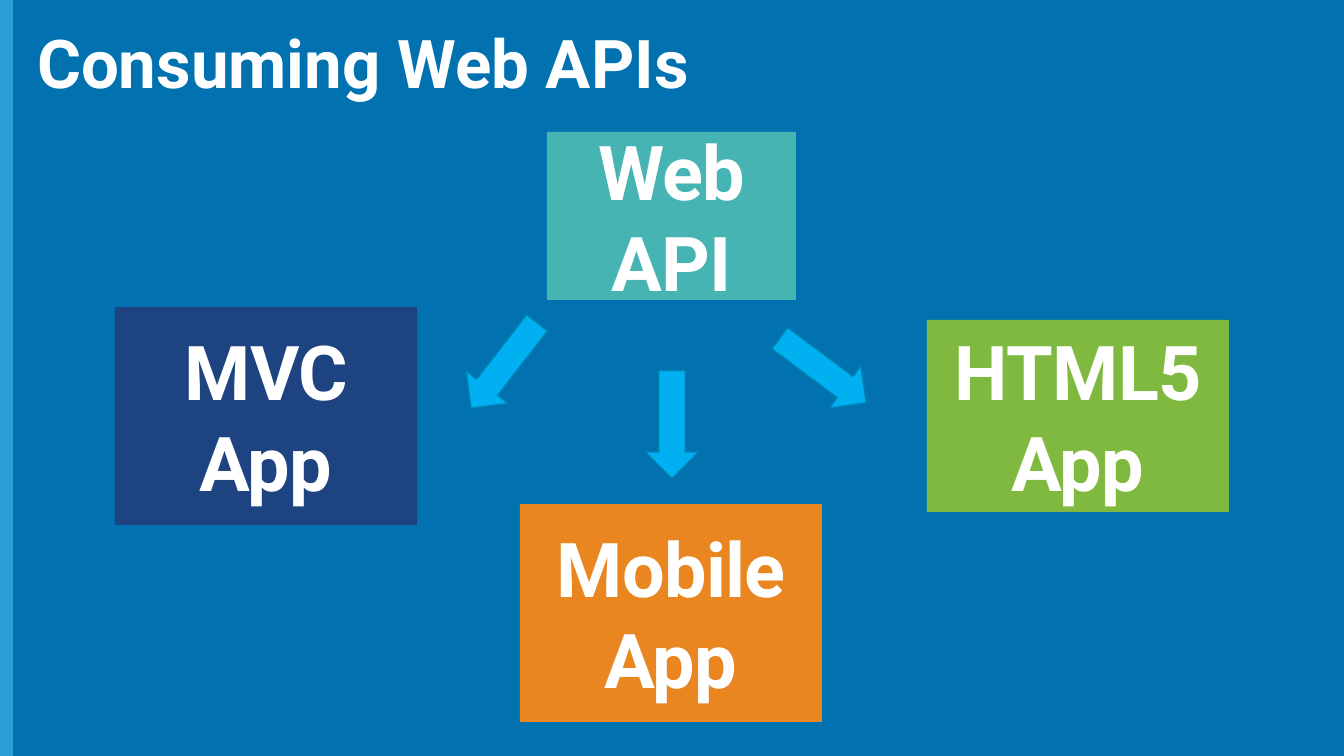
from pptx import Presentation
from pptx.dml.color import RGBColor
from pptx.enum.shapes import MSO_SHAPE as SHAPE
from pptx.enum.text import MSO_ANCHOR as ANCHOR, MSO_AUTO_SIZE as AUTO_SIZE, PP_ALIGN as ALIGN
from pptx.util import Pt

PX = 914400 / 100.8
WIDTH, HEIGHT = 1344, 756
FONT = "Roboto"
COLORS = {
    "background": "0171B0", "stripe": "289FD7", "white": "FFFFFF",
    "navy": "1D4380", "green": "80B940", "teal": "46B4B2", "orange": "E98620",
    "arrow": "00B0F0", "arrow_line": "0082B2",
}

TITLE = "Consuming Web APIs"
TITLE_BOX = (27, 25, 1288, 83)
# text, colour, (left, top, width, height)
BOXES = [
    ("MVC App", "navy", (115, 307, 302, 218)),
    ("HTML5 App", "green", (927, 320, 302, 192)),
    ("Web API", "teal", (547, 132, 249, 168)),
    ("Mobile App", "orange", (520, 504, 302, 218)),
]
# left, top, rotation
ARROWS = [(618, 398, 90), (450, 339, 127.8), (769, 344, 36.8)]
ARROW_SIZE = (108, 53)


def emu(*lengths):
    return [round(n * PX) for n in lengths]


def rgb(name):
    return RGBColor.from_string(COLORS[name])


def write(sp, text, size, align, margin=None, line_spacing=None, spacing=None):
    """Fill a shape with one bold white paragraph; spacing is in points."""
    tf = sp.text_frame
    tf.word_wrap = True
    tf.auto_size = AUTO_SIZE.NONE
    tf.vertical_anchor = ANCHOR.MIDDLE
    if margin is not None:
        tf.margin_left = tf.margin_top = tf.margin_right = tf.margin_bottom = emu(margin)[0]
    p = tf.paragraphs[0]
    p.alignment = align
    p.line_spacing = line_spacing
    r = p.add_run()
    r.text = text
    r.font.name, r.font.size, r.font.bold = FONT, Pt(size), True
    r.font.color.rgb = rgb("white")
    if spacing is not None:
        r.font._element.set("spc", str(round(spacing * 100)))


def add_shape(slide, kind, box, fill, line=None, rotation=0):
    sp = slide.shapes.add_shape(kind, *emu(*box))
    sp.shadow.inherit = False
    sp.rotation = rotation
    sp.fill.solid()
    sp.fill.fore_color.rgb = rgb(fill)
    if line:
        sp.line.color.rgb = rgb(line)
        sp.line.width = Pt(1)
    else:
        sp.line.fill.background()
    return sp


def main():
    prs = Presentation()
    prs.slide_width, prs.slide_height = emu(WIDTH, HEIGHT)
    slide = prs.slides.add_slide(prs.slide_layouts[5])
    slide.background.fill.solid()
    slide.background.fill.fore_color.rgb = rgb("background")

    add_shape(slide, SHAPE.RECTANGLE, (0, 0, 13, HEIGHT), "stripe")

    title = slide.shapes.title
    title.left, title.top, title.width, title.height = emu(*TITLE_BOX)
    write(title, TITLE, 48, ALIGN.LEFT, line_spacing=0.9)

    for left, top, rotation in ARROWS:
        add_shape(slide, SHAPE.RIGHT_ARROW, (left, top, *ARROW_SIZE),
                  "arrow", "arrow_line", rotation)

    for text, color, box in BOXES:
        sp = add_shape(slide, SHAPE.RECTANGLE, box, color)
        write(sp, text, 54, ALIGN.CENTER, margin=5, spacing=-0.5)

    prs.save("out.pptx")


if __name__ == "__main__":
    main()
